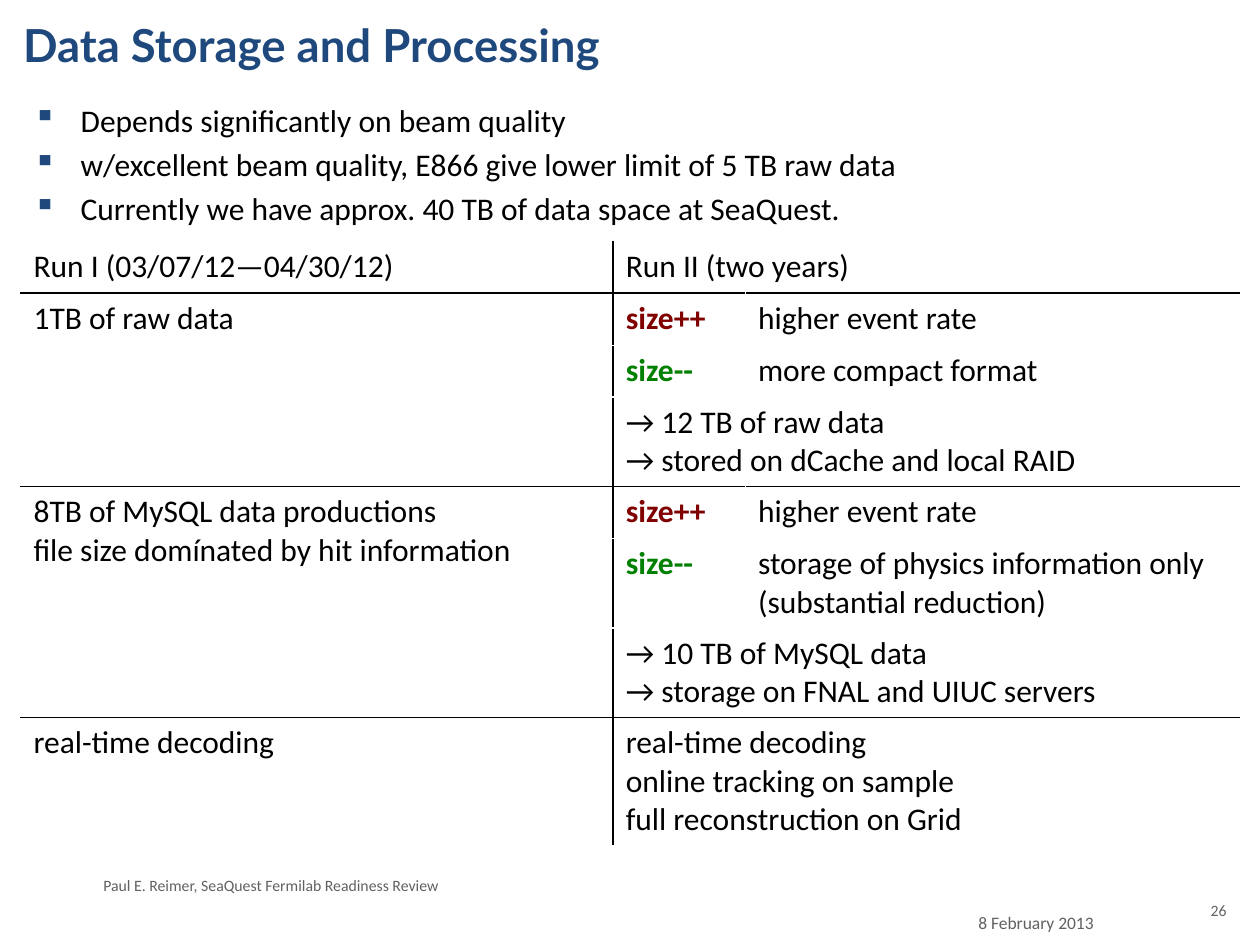
from dataclasses import dataclass

from lxml import etree
from pptx import Presentation
from pptx.dml.color import RGBColor
from pptx.enum.text import MSO_ANCHOR, MSO_AUTO_SIZE, PP_ALIGN
from pptx.oxml.ns import qn
from pptx.util import Pt

LEFT, RIGHT = PP_ALIGN.LEFT, PP_ALIGN.RIGHT
TOP = MSO_ANCHOR.TOP
NO_AUTOFIT = MSO_AUTO_SIZE.NONE
TITLE_ONLY = 5


@dataclass(frozen=True)
class Theme:
    title_font: str = "Lato"
    body_font: str = "Calibri"
    title_size: float = 26
    body_size: float = 18
    date_size: float = 10
    footer_size: float = 9
    navy: str = "1F497D"
    black: str = "000000"
    white: str = "FFFFFF"
    grey: str = "616161"
    growth: str = "800000"
    saving: str = "008000"


THEME = Theme()


@dataclass(frozen=True)
class Box:
    left: float
    top: float
    width: float
    height: float

    def lengths(self) -> tuple:
        return Pt(self.left), Pt(self.top), Pt(self.width), Pt(self.height)


@dataclass(frozen=True)
class Entry:
    """One table cell: each paragraph is a tuple of lines."""
    row: int
    col: int
    paragraphs: tuple
    rows: int = 1
    cols: int = 1
    color: str = THEME.black
    bold: bool = False


@dataclass(frozen=True)
class Footer:
    text: str
    box: Box
    size: float
    align: int = LEFT


TITLE_BOX = Box(6, 6, 648, 54)
BULLET_BOX = Box(12, 54, 696, 102)
TABLE_LEFT, TABLE_TOP = 12, 138
COLUMN_WIDTHS = (338.4, 75.6, 282)
ONE_LINE, TWO_LINES, THREE_LINES = 29.5, 51, 73
ROW_HEIGHTS = (ONE_LINE, 30, ONE_LINE, TWO_LINES,
               ONE_LINE, TWO_LINES, TWO_LINES, THREE_LINES)
SECTION_STARTS = (1, 4, 7)  # rows with a black rule above them

BULLETS = (
    "Depends significantly on beam quality",
    "w/excellent beam quality, E866 give lower limit of 5 TB raw data",
    "Currently we have approx. 40 TB of data space at SeaQuest.",
)


def size_change(row: int, label: str, color: str, reason: str) -> tuple:
    return (Entry(row, 1, ((label,),), color=color, bold=True),
            Entry(row, 2, ((reason,),)))


ENTRIES = (
    Entry(0, 0, (("Run I (03/07/12—04/30/12)",),)),
    Entry(0, 1, (("Run II (two years)",),), cols=2),
    # Raw data
    Entry(1, 0, (("1TB of raw data",),), rows=3),
    *size_change(1, "size++", THEME.growth, "higher event rate"),
    *size_change(2, "size--", THEME.saving, "more compact format"),
    Entry(3, 1, (("→ 12 TB of raw data",),
                 ("→ stored on dCache and local RAID",)), cols=2),
    # MySQL productions
    Entry(4, 0, (("8TB of MySQL data productions",
                  "file size domínated by hit information"),), rows=2),
    *size_change(4, "size++", THEME.growth, "higher event rate"),
    *size_change(5, "size--", THEME.saving,
                 "storage of physics information only (substantial reduction)"),
    Entry(6, 1, (("→ 10 TB of MySQL data",),
                 ("→ storage on FNAL and UIUC servers",)), cols=2),
    # Decoding
    Entry(7, 0, (("real-time decoding",),)),
    Entry(7, 1, (("real-time decoding",), ("online tracking on sample",),
                 ("full reconstruction on Grid",)), cols=2),
)

FOOTERS = (
    Footer("8 February 2013", Box(552, 517.5, 108, 16.5), THEME.date_size),
    Footer("Paul E. Reimer, SeaQuest Fermilab Readiness Review",
           Box(52, 497, 468, 18), THEME.footer_size),
    Footer("26", Box(678, 511, 30, 29), THEME.footer_size, RIGHT),
)


def add_run(paragraph, text: str, size: float = THEME.body_size,
            color: str = THEME.black, bold: bool = False,
            font: str = THEME.body_font) -> None:
    run = paragraph.add_run()
    run.text = text
    run.font.name, run.font.size, run.font.bold = font, Pt(size), bold
    run.font.color.rgb = RGBColor.from_string(color)


def paragraph_at(frame, index: int):
    return frame.add_paragraph() if index else frame.paragraphs[0]


def add_frame(slide, box: Box):
    frame = slide.shapes.add_textbox(*box.lengths()).text_frame
    frame.word_wrap = True
    return frame


def add_title(slide, text: str) -> None:
    title = slide.shapes.title
    title.left, title.top, title.width, title.height = TITLE_BOX.lengths()
    frame = title.text_frame
    frame.vertical_anchor, frame.auto_size = TOP, NO_AUTOFIT
    heading = frame.paragraphs[0]
    heading.alignment = LEFT
    add_run(heading, text, THEME.title_size, THEME.navy, True, THEME.title_font)


def add_bullets(slide) -> None:
    frame = add_frame(slide, BULLET_BOX)
    for index, text in enumerate(BULLETS):
        bullet = paragraph_at(frame, index)
        if index:
            bullet.space_before = Pt(3.6)
        properties = bullet._p.get_or_add_pPr()
        properties.set("marL", str(Pt(27)))
        properties.set("indent", str(-Pt(27)))
        color = etree.SubElement(properties, qn("a:buClr"))
        etree.SubElement(color, qn("a:srgbClr"), val=THEME.navy)
        etree.SubElement(properties, qn("a:buChar"), char="▪")
        add_run(bullet, text)


def set_borders(cell, row: int, col: int) -> None:
    """Rule off the sections and the two runs in black, the rest in white."""
    black_sides = {"a:lnL": col == 1, "a:lnR": col == 0,
                   "a:lnT": row in SECTION_STARTS,
                   "a:lnB": row + 1 in SECTION_STARTS}
    properties = cell._tc.get_or_add_tcPr()
    for position, (side, is_black) in enumerate(black_sides.items()):
        line = etree.Element(qn(side), w=str(Pt(1)))
        fill = etree.SubElement(line, qn("a:solidFill"))
        etree.SubElement(fill, qn("a:srgbClr"),
                         val=THEME.black if is_black else THEME.white)
        properties.insert(position, line)


def add_run_table(slide) -> None:
    box = Box(TABLE_LEFT, TABLE_TOP, sum(COLUMN_WIDTHS), sum(ROW_HEIGHTS))
    table = slide.shapes.add_table(
        len(ROW_HEIGHTS), len(COLUMN_WIDTHS), *box.lengths()).table
    table.first_row = table.horz_banding = False
    for column, width in zip(table.columns, COLUMN_WIDTHS):
        column.width = Pt(width)
    for row, height in enumerate(ROW_HEIGHTS):
        table.rows[row].height = Pt(height)
        for col in range(len(COLUMN_WIDTHS)):
            cell = table.cell(row, col)
            cell.fill.background()
            set_borders(cell, row, col)
    for entry in ENTRIES:
        cell = table.cell(entry.row, entry.col)
        if entry.rows > 1 or entry.cols > 1:
            cell.merge(table.cell(entry.row + entry.rows - 1,
                                  entry.col + entry.cols - 1))
        for index, lines in enumerate(entry.paragraphs):
            paragraph = paragraph_at(cell.text_frame, index)
            for number, line in enumerate(lines):
                if number:
                    paragraph.add_line_break()
                add_run(paragraph, line, color=entry.color, bold=entry.bold)


def add_footer(slide, footer: Footer) -> None:
    paragraph = add_frame(slide, footer.box).paragraphs[0]
    paragraph.alignment = footer.align
    add_run(paragraph, footer.text, footer.size, THEME.grey)


def main() -> None:
    deck = Presentation()
    deck.slide_width, deck.slide_height = Pt(720), Pt(540)
    slide = deck.slides.add_slide(deck.slide_layouts[TITLE_ONLY])
    add_title(slide, "Data Storage and Processing")
    add_run_table(slide)
    for footer in FOOTERS:
        add_footer(slide, footer)
    add_bullets(slide)
    deck.save("out.pptx")


if __name__ == "__main__":
    main()
